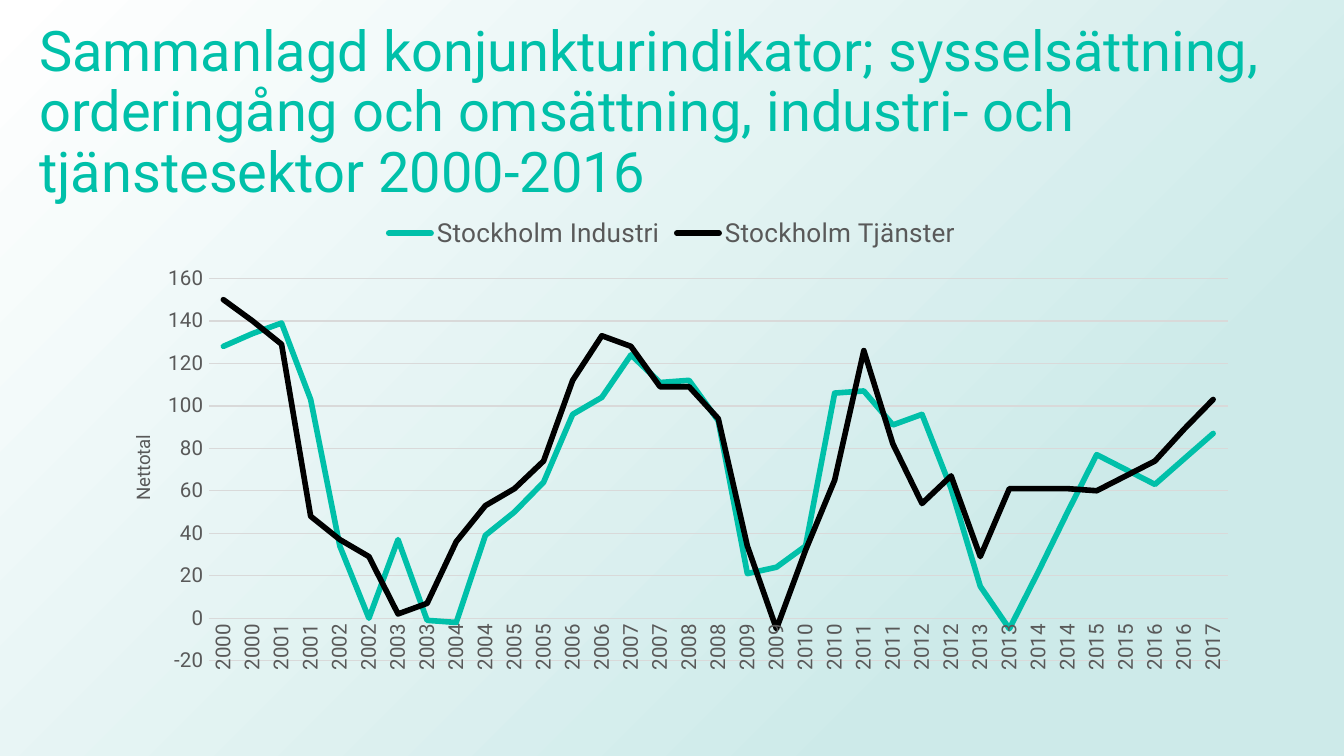
from dataclasses import dataclass

from lxml.etree import SubElement
from pptx import Presentation
from pptx.chart.data import CategoryChartData
from pptx.dml.color import RGBColor
from pptx.enum.chart import XL_CHART_TYPE, XL_LEGEND_POSITION, XL_TICK_MARK
from pptx.enum.shapes import MSO_SHAPE
from pptx.enum.text import MSO_ANCHOR
from pptx.oxml import parse_xml
from pptx.oxml.ns import nsdecls, qn
from pptx.util import Emu, Pt

EMU_PER_PX = 914400 / 134.4
SLIDE_WIDTH, SLIDE_HEIGHT = 1344, 756
TEAL, BLACK, GREY, GRID = "00C0A9", "000000", "595959", "D9D9D9"
FONT = "Roboto"
VERTICAL = "-5400000"


@dataclass(frozen=True)
class Box:
    left: int
    top: int
    width: int
    height: int

    def emu(self) -> tuple[Emu, ...]:
        return tuple(px(v) for v in (self.left, self.top, self.width, self.height))


@dataclass(frozen=True)
class Indicator:
    name: str
    color: str
    values: tuple[int, ...]


INDICATORS = (
    Indicator("Stockholm Industri", TEAL, (
        128, 134, 139, 103, 34, 0, 37, -1, -2, 39, 50, 64, 96, 104, 124, 111, 112, 93,
        21, 24, 34, 106, 107, 91, 96, 61, 15, -5, 22, 50, 77, 70, 63, 75, 87)),
    Indicator("Stockholm Tjänster", BLACK, (
        150, 140, 129, 48, 37, 29, 2, 7, 36, 53, 61, 74, 112, 133, 128, 109, 109, 94,
        34, -5, 32, 65, 126, 82, 54, 67, 29, 61, 61, 61, 60, 67, 74, 89, 103)),
)
HEADING = ("Sammanlagd konjunkturindikator; sysselsättning, orderingång och "
           "omsättning, industri- och tjänstesektor 2000-2016")


def px(length: int) -> Emu:
    return Emu(round(length * EMU_PER_PX))


def rgb(color: str) -> RGBColor:
    return RGBColor.from_string(color)


def style_font(font, size: int, color: str) -> None:
    font.name = FONT
    font.size = Pt(size)
    font.bold = False
    font.color.rgb = rgb(color)


def style_line(line, color: str, width: float) -> None:
    line.color.rgb = rgb(color)
    line.width = Pt(width)


def place(element, index: int, **fractions: float) -> None:
    """Give a chart part a manual layout, as fractions of the chart area."""
    for old in element.findall(qn("c:layout")):
        element.remove(old)
    layout = parse_xml(f"<c:layout {nsdecls('c')}/>")
    manual = SubElement(layout, qn("c:manualLayout"))
    if "w" in fractions:
        SubElement(manual, qn("c:layoutTarget"), val="inner")
    for mode in ("xMode", "yMode"):
        SubElement(manual, qn(f"c:{mode}"), val="edge")
    for key, value in fractions.items():
        SubElement(manual, qn(f"c:{key}"), val=str(value))
    element.insert(index, layout)


def turn_vertical(element) -> None:
    for body in element.iter(qn("a:bodyPr")):
        body.set("rot", VERTICAL)
        body.set("vert", "horz")


def add_background(slide) -> None:
    """Radial gradient centred on the lower right corner."""
    panel = slide.shapes.add_shape(
        MSO_SHAPE.RECTANGLE, *Box(0, 0, SLIDE_WIDTH, SLIDE_HEIGHT).emu())
    panel.shadow.inherit = False
    panel.line.fill.background()
    panel.fill.gradient()
    stops = panel.fill.gradient_stops
    for stop, (position, color) in zip(stops, ((0.23, "CDEAE9"), (1, "FFFFFF"))):
        stop.position = position
        stop.color.rgb = rgb(color)
    gradient = panel.element.spPr.find(qn("a:gradFill"))
    gradient.remove(gradient.find(qn("a:lin")))
    path = SubElement(gradient, qn("a:path"), path="circle")
    SubElement(path, qn("a:fillToRect"), l="100000", t="100000")


def add_heading(slide, box: Box) -> None:
    frame = slide.shapes.add_textbox(*box.emu()).text_frame
    frame.word_wrap = True
    frame.vertical_anchor = MSO_ANCHOR.MIDDLE
    paragraph = frame.paragraphs[0]
    paragraph.line_spacing = 0.9
    run = paragraph.add_run()
    run.text = HEADING
    style_font(run.font, 30, TEAL)


def style_axes(chart) -> None:
    years, totals = chart.category_axis, chart.value_axis
    for axis in (years, totals):
        axis.major_tick_mark = axis.minor_tick_mark = XL_TICK_MARK.NONE
        style_font(axis.tick_labels.font, 11, GREY)
    style_line(years.format.line, GRID, 0.75)
    turn_vertical(years._element)

    totals.minimum_scale, totals.maximum_scale, totals.major_unit = -20, 160, 20
    totals.tick_labels.number_format = "0"
    totals.tick_labels.number_format_is_linked = False
    totals.format.line.fill.background()
    style_line(totals.major_gridlines.format.line, GRID, 0.75)

    run = totals.axis_title.text_frame.paragraphs[0].add_run()
    run.text = "Nettotal"
    style_font(run.font, 10, GREY)
    title = totals.axis_title._element
    turn_vertical(title)
    place(title, 1, x=0.03, y=0.48)


def add_indicator_chart(slide, box: Box) -> None:
    data = CategoryChartData()
    data.categories = [str(2000 + half // 2) for half in range(len(INDICATORS[0].values))]
    for indicator in INDICATORS:
        data.add_series(indicator.name, indicator.values)
    chart = slide.shapes.add_chart(XL_CHART_TYPE.LINE, *box.emu(), data).chart
    chart.has_title = False
    style_font(chart.font, 10, BLACK)
    chart.has_legend = True
    chart.legend.position = XL_LEGEND_POSITION.TOP
    chart.legend.include_in_layout = False
    style_font(chart.legend.font, 14, GREY)

    plot = chart.plots[0]
    plot.vary_by_categories = False
    for series, indicator in zip(plot.series, INDICATORS):
        series.smooth = False
        style_line(series.format.line, indicator.color, 3)
        series.format.line._ln.set("cap", "rnd")
    style_axes(chart)
    plot_area = chart._chartSpace.chart.plotArea
    place(plot_area, 0, x=0.1, y=0.16, w=0.88, h=0.8)


def main() -> None:
    presentation = Presentation()
    presentation.slide_width = px(SLIDE_WIDTH)
    presentation.slide_height = px(SLIDE_HEIGHT)
    slide = presentation.slides.add_slide(presentation.slide_layouts[6])
    add_background(slide)
    add_heading(slide, Box(26, 40, 1318, 147))
    add_indicator_chart(slide, Box(93, 202, 1158, 478))
    presentation.save("out.pptx")


if __name__ == "__main__":
    main()
